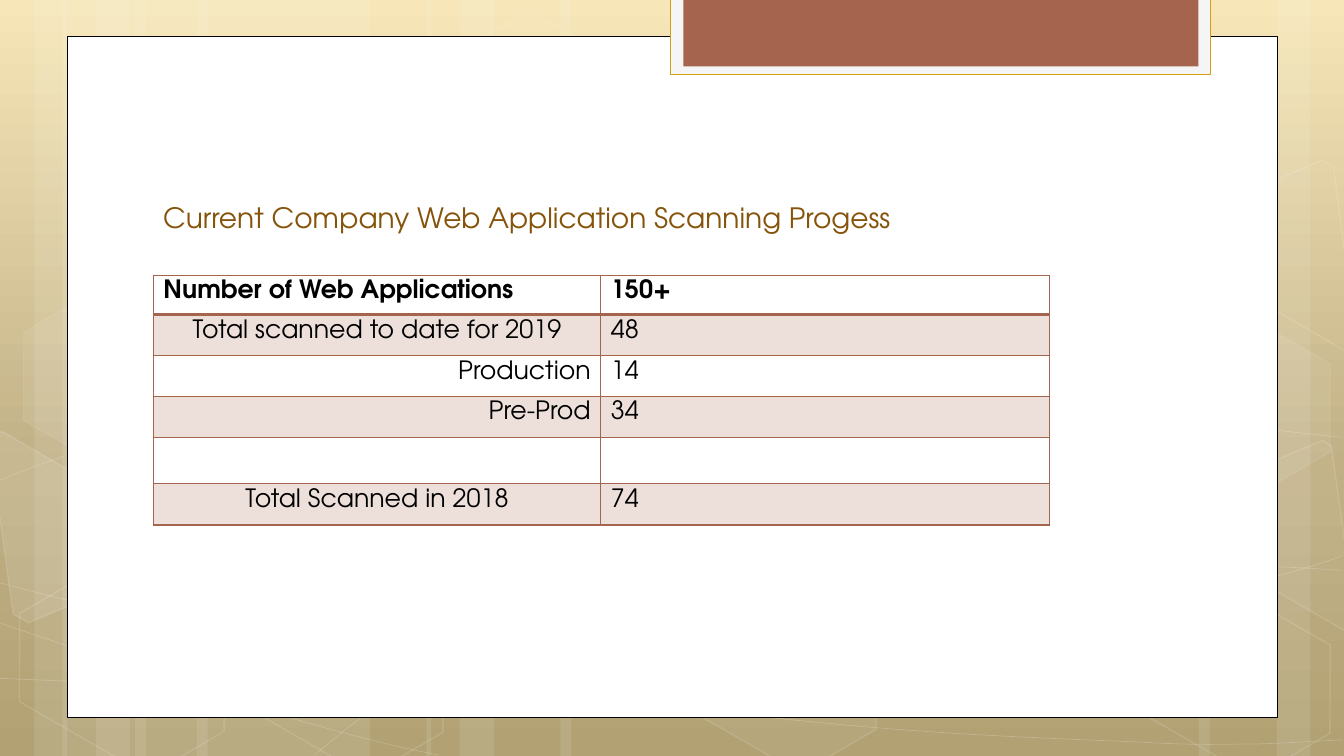
"""Build the web application scanning progress slide."""
from copy import deepcopy
from typing import Any, NamedTuple, Optional

from lxml import etree
from pptx import Presentation
from pptx import util as u
from pptx.dml.color import RGBColor
from pptx.enum import shapes, text
from pptx.oxml.ns import qn

PX = 9144
FONT = "TeX Gyre Adventor"
WHITE = RGBColor(0xFF, 0xFF, 0xFF)
BLACK = RGBColor(0, 0, 0)
SMOKE = RGBColor(0xF5, 0xF5, 0xF5)
GOLD = RGBColor(0xD2, 0xA0, 0x10)
BROWN = RGBColor(0x85, 0x54, 0x0A)
RUST = RGBColor(0xA5, 0x64, 0x4E)
SKY = [
    (0, RGBColor(0xF6, 0xE4, 0xB0)),
    (0.62, RGBColor(0xBA, 0xA8, 0x78)),
    (1, RGBColor(0xA9, 0x97, 0x64)),
]
LEFT, MID, RIGHT = text.PP_ALIGN.LEFT, text.PP_ALIGN.CENTER, text.PP_ALIGN.RIGHT
Point = tuple[int, int]


class Look(NamedTuple):
    """Fill and line of a shape, with opacity in percent."""
    fill: Optional[RGBColor] = None
    tint: int = 100
    line: Optional[RGBColor] = None
    width: float = 1
    ink: int = 100


class Box(NamedTuple):
    """A preset shape's place and look."""
    x: int
    y: int
    w: int
    h: int
    look: Look


class Shard(NamedTuple):
    """A polygon's corners and look."""
    dots: list[Point]
    look: Look


class Row(NamedTuple):
    """A table row's height, label, value and label alignment."""
    h: int
    label: str
    value: str
    align: text.PP_ALIGN = LEFT


BAND = Look(WHITE, 10)
BANDS = [
    Box(x, 0, w, 750, BAND)
    for x, w in [
        (134, 233), (0, 67), (34, 111), (195, 233), (62, 67), (95, 111),
        (967, 233), (1267, 67), (1189, 111), (556, 411), (423, 67), (456, 111),
    ]
]
THREAD = Look(line=WHITE, width=0.5, ink=20)
CURVES = [
    [(-1, 673), (71, 676), (143, 679), (243, 678), (343, 677), (466, 675),
     (599, 665), (733, 655), (922, 636), (1045, 617), (1167, 598), (1292, 568),
     (1332, 551)],
    [(-1, 477), (37, 461), (75, 446), (151, 431), (227, 416), (334, 394),
     (452, 387), (571, 380), (714, 379), (861, 387), (1008, 395), (1252, 426),
     (1332, 434)],
    [(-3, 617), (158, 672), (319, 727), (435, 749)],
    [(-1, 578), (40, 589), (82, 600), (160, 616), (237, 631), (353, 656),
     (464, 673), (576, 690), (716, 708), (826, 718), (937, 729), (1055, 733),
     (1126, 736), (1196, 740), (1214, 738), (1249, 738), (1283, 737), (1308, 735),
     (1332, 734)],
    [(312, 749), (336, 729), (359, 709), (392, 691), (424, 673), (469, 653),
     (506, 639), (543, 625), (566, 619), (615, 609), (664, 599), (754, 585),
     (800, 578), (847, 571), (854, 571), (896, 569), (937, 566), (1002, 563),
     (1048, 562), (1094, 561), (1171, 562), (1171, 562), (1200, 562), (1230, 562),
     (1259, 562), (1284, 563), (1306, 564), (1318, 565), (1330, 566), (1326, 565),
     (1330, 566)],
]
RIM = Look(line=WHITE, ink=12)
PALE = Look(WHITE, 7, WHITE, 1, 8)
HEXES = [
    Box(x, y, 234, 152, look)
    for x, y, look in [
        (434, 36, Look(WHITE, 4, WHITE, 1, 8)), (651, 589, Look(WHITE, 6, WHITE, 1, 12)),
        (4, 591, RIM), (8, 312, PALE), (221, 592, RIM), (1101, 593, RIM),
        (1101, 314, PALE),
    ]
]
SHARDS = [
    Shard([(-11, 434), (2, 428), (104, 487), (116, 581), (28, 618), (13, 609)],
          Look(WHITE, 10, WHITE, 1, 12)),
    Shard([(1224, 474), (1312, 437), (1321, 443), (1346, 625), (1338, 628), (1236, 569)],
          Look(WHITE, 4, WHITE, 1, 12)),
    Shard([(1224, 196), (1312, 159), (1323, 165), (1346, 346), (1338, 350), (1236, 291)], RIM),
]
PANELS = [
    Box(67, 36, 1200, 676, Look(WHITE, line=BLACK, width=0.5)),
    Box(665, -2, 536, 76, Look(SMOKE, line=GOLD)),
    Box(678, -2, 511, 68, Look(RUST)),
]
COLS = (444, 445)
ROWS = [
    Row(39, "Number of Web Applications", "150+"),
    Row(41, "Total scanned to date for 2019", "48", MID),
    Row(40, "Production", "14", RIGHT),
    Row(41, "Pre-Prod", "34", RIGHT),
    Row(46, "", ""),
    Row(41, "Total Scanned in 2018", "74", MID),
]


def fade(node: Any, pct: int) -> None:
    """Set the opacity of the first colour under a node."""
    if pct < 100:
        tone = node.find(".//" + qn("a:srgbClr"))
        etree.SubElement(tone, qn("a:alpha"), val=str(pct * 1000))


def paint(shape: Any, look: Look) -> None:
    """Give a shape its fill and line."""
    shape.shadow.inherit = False
    props = shape._element.spPr
    if look.fill is None:
        shape.fill.background()
    else:
        shape.fill.solid()
        shape.fill.fore_color.rgb = look.fill
        fade(props.find(qn("a:solidFill")), look.tint)
    if look.line is None:
        shape.line.fill.background()
    else:
        shape.line.color.rgb = look.line
        shape.line.width = u.Pt(look.width)
        fade(props.find(qn("a:ln")), look.ink)


def put(slide: Any, kind: Any, box: Box) -> Any:
    """Draw a preset shape."""
    shape = slide.shapes.add_shape(kind, *(n * PX for n in box[:4]))
    paint(shape, box.look)
    return shape


def trace(slide: Any, dots: list[Point], look: Look, close: bool) -> Any:
    """Draw an outline."""
    pen = slide.shapes.build_freeform(*dots[0], scale=PX)
    pen.add_line_segments(dots[1:], close=close)
    shape = pen.convert_to_shape()
    paint(shape, look)
    return shape


def bend(shape: Any) -> None:
    """Turn each three line segments of an outline into one cubic curve."""
    lines = list(shape._element.spPr.iter(qn("a:lnTo")))
    for i in range(0, len(lines), 3):
        cubic = etree.Element(qn("a:cubicBezTo"))
        lines[i].addprevious(cubic)
        for line in lines[i:i + 3]:
            cubic.append(line[0])
            line.getparent().remove(line)


def write(frame: Any, words: str, *, size: int = 18, color: RGBColor = BLACK,
          bold: bool = False, align: text.PP_ALIGN = LEFT) -> None:
    """Write one formatted paragraph."""
    para = frame.paragraphs[0]
    para.alignment = align
    if words:
        run = para.add_run()
        run.text = words
        font = run.font
        font.name, font.size, font.bold = FONT, u.Pt(size), bold
        font.color.rgb = color


def edge(cell: Any, side: str, width: int) -> None:
    """Draw one border of a cell."""
    props = cell._tc.get_or_add_tcPr()
    line = etree.SubElement(props, qn("a:ln" + side), w=str(u.Pt(width)))
    fill = etree.SubElement(line, qn("a:solidFill"))
    etree.SubElement(fill, qn("a:srgbClr"), val=str(RUST))


def grid(slide: Any) -> None:
    """Draw the table of scan counts."""
    high = sum(row.h for row in ROWS)
    table = slide.shapes.add_table(
        len(ROWS), len(COLS), 152 * PX, 273 * PX, sum(COLS) * PX, high * PX).table
    table.first_row = table.horz_banding = False
    for col, wide in zip(table.columns, COLS):
        col.width = wide * PX
    for i, row in enumerate(ROWS):
        table.rows[i].height = row.h * PX
        for j, words in enumerate((row.label, row.value)):
            cell = table.cell(i, j)
            cell.margin_bottom = 0
            for side in "LRTB":
                edge(cell, side, 2 if (i, side) in ((0, "B"), (1, "T")) else 1)
            if i % 2:
                cell.fill.solid()
                cell.fill.fore_color.rgb = RUST
                fade(cell._tc.tcPr.find(qn("a:solidFill")), 20)
            else:
                cell.fill.background()
            write(cell.text_frame, words, bold=i == 0, align=LEFT if j else row.align)


def sky(slide: Any) -> None:
    """Fill the background with a gradient of three stops."""
    fill = slide.background.fill
    fill.gradient()
    fill.gradient_angle = 270
    stops = slide._element.find(".//" + qn("a:gsLst"))
    stops.append(deepcopy(stops[-1]))
    for stop, (spot, tone) in zip(fill.gradient_stops, SKY):
        stop.position = spot
        stop.color.rgb = tone


def main() -> None:
    """Build and save the slide."""
    deck = Presentation()
    deck.slide_width, deck.slide_height = u.Emu(12192000), 750 * PX
    slide = deck.slides.add_slide(deck.slide_layouts[6])
    sky(slide)
    for band in BANDS:
        put(slide, shapes.MSO_SHAPE.RECTANGLE, band)
    for curve in CURVES:
        bend(trace(slide, curve, THREAD, False))
    for box in HEXES:
        hexa = put(slide, shapes.MSO_SHAPE.HEXAGON, box)
        hexa.adjustments[0] = 0.285
        hexa.rotation = 30
    for shard in SHARDS:
        trace(slide, shard.dots, shard.look, True)
    for panel in PANELS:
        put(slide, shapes.MSO_SHAPE.RECTANGLE, panel)
    title = slide.shapes.add_textbox(
        152 * PX, 112 * PX, 1024 * PX, 125 * PX).text_frame
    title.word_wrap = True
    title.vertical_anchor = text.MSO_ANCHOR.BOTTOM
    write(title, "Current Company Web Application Scanning Progess", size=20, color=BROWN)
    grid(slide)
    deck.save("out.pptx")


if __name__ == "__main__":
    main()
